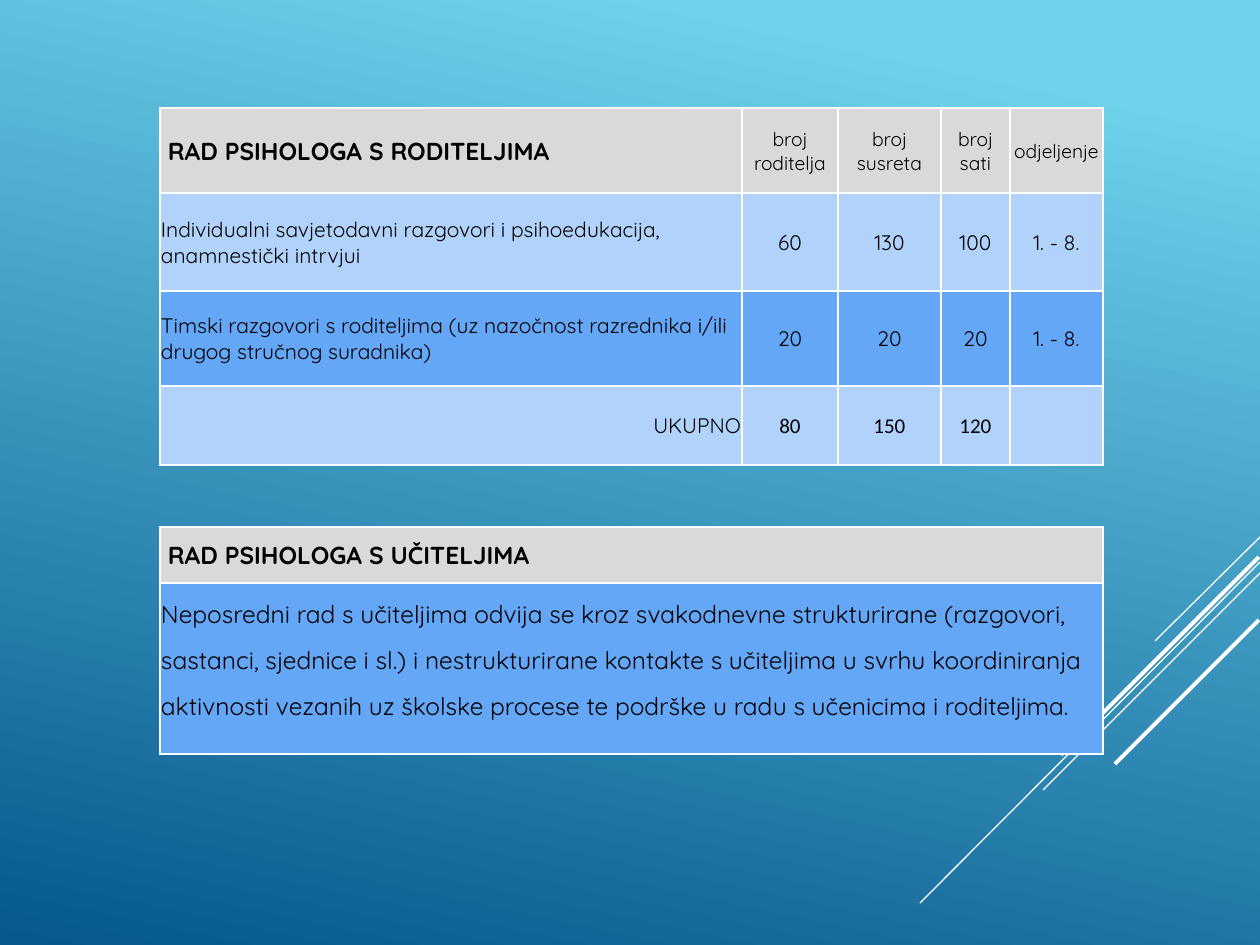
from dataclasses import dataclass

from lxml import etree
from pptx import Presentation
from pptx.dml.color import RGBColor
from pptx.enum.shapes import MSO_CONNECTOR
from pptx.enum.text import MSO_ANCHOR, PP_ALIGN
from pptx.oxml.ns import qn
from pptx.util import Emu, Pt

LEFT, MID, RIGHT = PP_ALIGN.LEFT, PP_ALIGN.CENTER, PP_ALIGN.RIGHT
TOP, CENTER = MSO_ANCHOR.TOP, MSO_ANCHOR.MIDDLE
STRAIGHT = MSO_CONNECTOR.STRAIGHT
EDGES = ("a:lnL", "a:lnR", "a:lnT", "a:lnB")


def px(n):
    return Emu(round(n * 914400 / 126))


@dataclass(frozen=True)
class Theme:
    sky: str = "6ED2EB"
    deep: str = "06588E"
    white: str = "FFFFFF"
    ink: str = "000000"
    gray: str = "D9D9D9"
    pale: str = "B1D3FB"
    blue: str = "64A7F7"
    font: str = "Quicksand"
    alt: str = "Calibri"
    title: int = 14
    body: int = 12
    small: int = 11
    thin: float = 0.75
    thick: float = 2.25


class Deck:
    def __init__(self, theme):
        self.theme = theme
        self.file = Presentation()
        self.file.slide_width, self.file.slide_height = px(1260), px(945)
        self.slide = self.file.slides.add_slide(self.file.slide_layouts[6])

    def back(self):
        fill = self.slide.background.fill
        fill.gradient()
        fill.gradient_angle = 258
        looks = ((0.1, self.theme.sky), (1, self.theme.deep))
        for stop, (spot, color) in zip(fill.gradient_stops, looks):
            stop.position = spot
            stop.color.rgb = RGBColor.from_string(color)

    def line(self, start, end, width):
        line = self.slide.shapes.add_connector(
            STRAIGHT, *map(px, start + end))
        line.line.color.rgb = RGBColor.from_string(self.theme.white)
        line.line.width = Pt(width)
        etree.SubElement(line._element.spPr, qn("a:effectLst"))

    def table(self, left, top, cols, rows):
        frame = self.slide.shapes.add_table(
            len(rows), len(cols), px(left), px(top),
            px(sum(cols)), px(sum(rows)))
        table = frame.table
        table.horz_banding = False
        for col, width in zip(table.columns, cols):
            col.width = px(width)
        for row, height in zip(table.rows, rows):
            row.height = px(height)
        return table

    def border(self, cell):
        props = cell._tc.get_or_add_tcPr()
        for edge in EDGES:
            line = etree.SubElement(props, qn(edge), w=str(Pt(1)))
            fill = etree.SubElement(line, qn("a:solidFill"))
            etree.SubElement(fill, qn("a:srgbClr"), val=self.theme.white)

    def cell(self, cell, text, fill, size, align=LEFT, bold=False,
             font=None, anchor=CENTER, space=None):
        self.border(cell)
        cell.fill.solid()
        cell.fill.fore_color.rgb = RGBColor.from_string(fill)
        cell.margin_left = cell.margin_right = cell.margin_top = px(1)
        cell.margin_bottom = 0
        cell.vertical_anchor = anchor
        cell.text_frame.text = text
        para = cell.text_frame.paragraphs[0]
        para.alignment = align
        if space:
            para.line_spacing = space
        for run in para.runs:
            run.font.name = font or self.theme.font
            run.font.size = Pt(size)
            run.font.bold = bold
            run.font.color.rgb = RGBColor.from_string(self.theme.ink)


def main():
    theme = Theme()
    deck = Deck(theme)
    deck.back()

    for start, end, width in (
        ((1260, 537), (1155, 641), theme.thin),
        ((1260, 562), (920, 903), theme.thin),
        ((1260, 573), (1043, 790), theme.thin),
        ((1259, 557), (1061, 755), theme.thick),
        ((1259, 620), (1115, 764), theme.thick),
    ):
        deck.line(start, end, width)

    heads = (" RAD PSIHOLOGA S RODITELJIMA", "broj roditelja",
             "broj susreta", "broj sati", "odjeljenje")
    talks = ("Individualni savjetodavni razgovori i psihoedukacija, "
             "anamnestički intrvjui", "60", "130", "100", "1. - 8.")
    teams = ("Timski razgovori s roditeljima (uz nazočnost razrednika i/ili "
             "drugog stručnog suradnika)", "20", "20", "20", "1. - 8.")
    total = ("UKUPNO", "80", "150", "120", "")
    plan = (
        (heads, theme.gray, theme.small, theme.font),
        (talks, theme.pale, theme.body, theme.font),
        (teams, theme.blue, theme.body, theme.font),
        (total, theme.pale, theme.body, theme.alt),
    )
    table = deck.table(160, 108, (582, 96, 103, 69, 93), (85, 98, 95, 79))
    for r, (texts, fill, size, font) in enumerate(plan):
        for c, text in enumerate(texts[1:], 1):
            deck.cell(table.cell(r, c), text, fill, size, MID, font=font)
        first = table.cell(r, 0)
        if texts is heads:
            deck.cell(first, texts[0], fill, theme.title, bold=True)
        else:
            side = RIGHT if texts is total else LEFT
            deck.cell(first, texts[0], fill, size, side)

    table = deck.table(160, 527, (943,), (56, 171))
    deck.cell(table.cell(0, 0), " RAD PSIHOLOGA S UČITELJIMA",
              theme.gray, theme.title, bold=True)
    deck.cell(
        table.cell(1, 0),
        "Neposredni rad s učiteljima odvija se kroz svakodnevne "
        "strukturirane (razgovori, sastanci, sjednice i sl.) i "
        "nestrukturirane kontakte s učiteljima u svrhu koordiniranja "
        "aktivnosti vezanih uz školske procese te podrške u radu s "
        "učenicima i roditeljima.",
        theme.blue, theme.title, anchor=TOP, space=1.5)

    deck.file.save("out.pptx")


if __name__ == "__main__":
    main()
